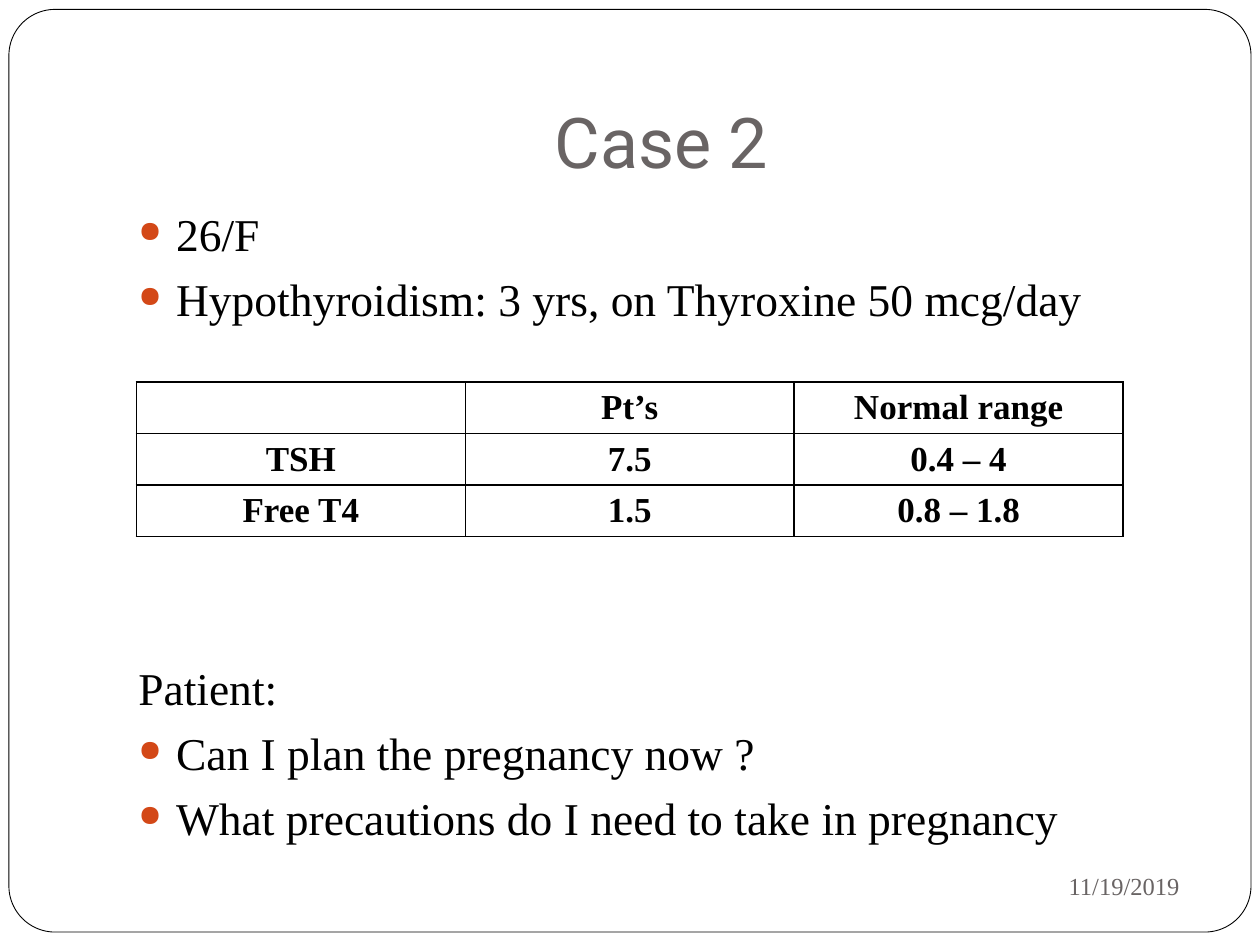
from lxml import etree
from pptx import Presentation
from pptx.dml.color import RGBColor
from pptx.enum import shapes, text
from pptx.oxml import parse_xml
from pptx.oxml.ns import nsdecls, qn
from pptx.util import Cm, Pt

SERIF = "Times New Roman"
BLACK, GREY, ORANGE = "000000", "696464", "D34817"


def color(value):
    return RGBColor.from_string(value)


def write(para, words, font, size, tint, align, bold=False):
    para.alignment = align
    span = para.add_run()
    span.text = words
    formats = {"name": font, "size": Pt(size), "bold": bold}
    for name, value in formats.items():
        setattr(span.font, name, value)
    span.font.color.rgb = color(tint)


deck = Presentation()
deck.slide_width, deck.slide_height = Cm(25.4), Cm(19.05)
page = deck.slides.add_slide(deck.slide_layouts[6])

# Rounded page frame
frame = page.shapes.add_shape(
    shapes.MSO_SHAPE.ROUNDED_RECTANGLE, Cm(0.18), Cm(0.19), Cm(25.04), Cm(18.6))
frame.adjustments[0] = 0.05
frame.shadow.inherit = False
frame.fill.solid()
frame.fill.fore_color.rgb = color("FFFFFF")
frame.line.color.rgb = color(BLACK)
frame.line.width = Pt(0.5)

# Title, date and body boxes
left, center, right = text.PP_ALIGN.LEFT, text.PP_ALIGN.CENTER, text.PP_ALIGN.RIGHT
places = {
    "title": (2.54, 0.75, 21.59, 3.18, text.MSO_ANCHOR.BOTTOM),
    "date": (17.15, 17.2, 6.88, 1.32, text.MSO_ANCHOR.MIDDLE),
    "body": (2.54, 4.03, 21.59, 12.7, text.MSO_ANCHOR.TOP),
}
frames = {}
for role, (*place, anchor) in places.items():
    box = page.shapes.add_textbox(*map(Cm, place))
    frames[role] = box.text_frame
    frames[role].word_wrap = True
    frames[role].vertical_anchor = anchor
frames["title"].margin_bottom = Cm(0.25)
write(frames["title"].paragraphs[0], "Case 2", "Roboto", 40, GREY, center)
write(frames["date"].paragraphs[0], "11/19/2019", SERIF, 14, GREY, right)

# Body lines: words, bulleted, space before in points
lines = [
    ("26/F", True, 5.8),
    ("Hypothyroidism: 3 yrs, on Thyroxine 50 mcg/day", True, 5.8),
    ("Patient:", False, 191.5),  # leaves room for the table
    ("Can I plan the pregnancy now ?", True, 5.8),
    ("What precautions do I need to take in pregnancy", True, 5.8),
]
body = frames["body"]
for index, (words, bulleted, space) in enumerate(lines):
    para = body.add_paragraph() if index else body.paragraphs[0]
    write(para, words, SERIF, 26, BLACK, left)
    para.space_before = Pt(space)
    if bulleted:
        props = para._p.get_or_add_pPr()
        props.set("marL", str(Cm(0.76)))
        props.set("indent", str(-Cm(0.76)))
        tint = etree.SubElement(props, qn("a:buClr"))
        etree.SubElement(tint, qn("a:srgbClr"), val=ORANGE)
        etree.SubElement(props, qn("a:buSzPct"), val="65000")
        etree.SubElement(props, qn("a:buChar"), char="●")

# Lab results
results = [
    ("", "Pt’s", "Normal range"),
    ("TSH", "7.5", "0.4 – 4"),
    ("Free T4", "1.5", "0.8 – 1.8"),
]
table = page.shapes.add_table(
    3, 3, Cm(2.75), Cm(7.7), Cm(19.89), Cm(3.12)).table
table.first_row = table.horz_banding = False
for row, values in zip(table.rows, results):
    row.height = Cm(1.04)
    for cell, words in zip(row.cells, values):
        cell.margin_bottom = Cm(0.05)
        if words:
            write(cell.text_frame.paragraphs[0], words, SERIF, 20, BLACK, center, True)
        props = cell._tc.get_or_add_tcPr()
        for side in ("lnL", "lnR", "lnT", "lnB"):
            props.append(parse_xml(
                f'<a:{side} {nsdecls("a")} w="{Pt(1)}"><a:solidFill>'
                f'<a:srgbClr val="{BLACK}"/></a:solidFill></a:{side}>'))
        cell.fill.background()

deck.save("out.pptx")
